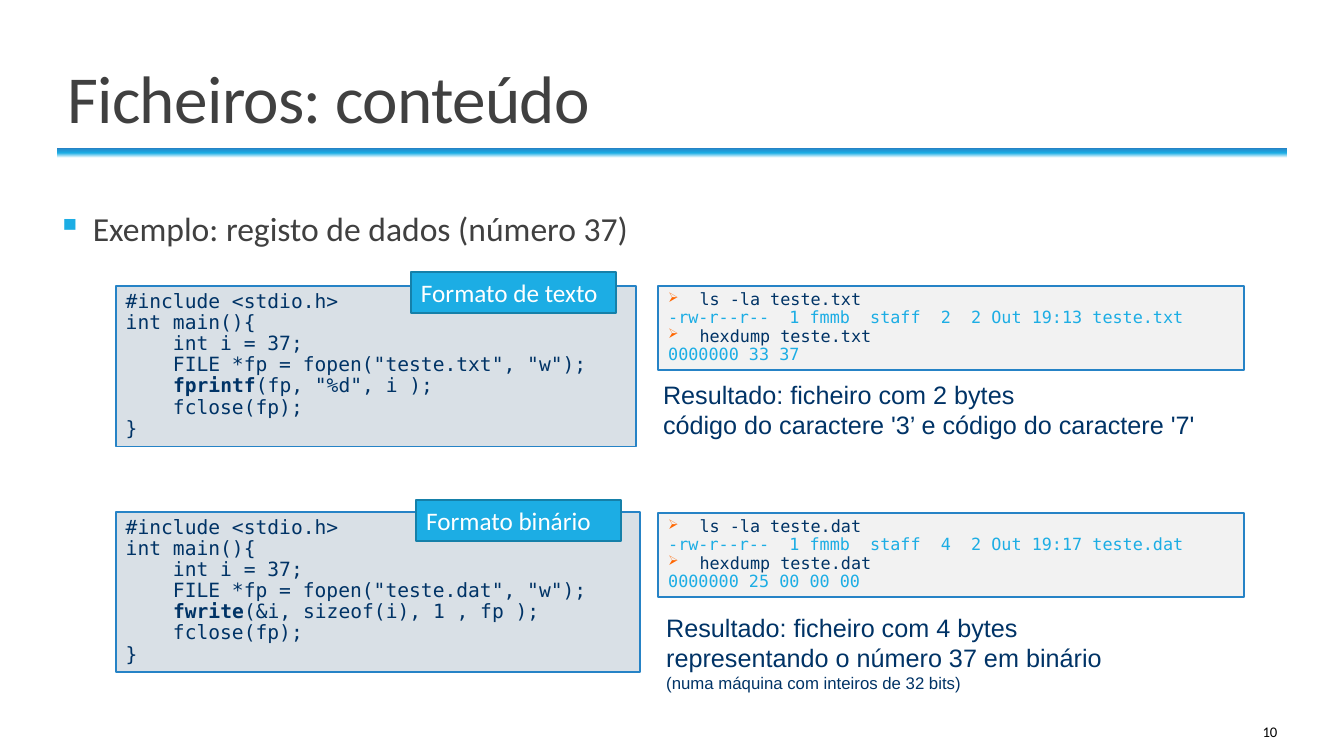
from lxml import etree
from copy import deepcopy
from pptx import Presentation
from pptx.dml.color import RGBColor
from pptx.enum.shapes import MSO_SHAPE
from pptx.enum.text import MSO_ANCHOR, PP_ALIGN
from pptx.oxml.ns import qn
from pptx.util import Cm, Pt

RECT = MSO_SHAPE.RECTANGLE
TOP, MIDDLE, BOTTOM = MSO_ANCHOR.TOP, MSO_ANCHOR.MIDDLE, MSO_ANCHOR.BOTTOM
LEFT, RIGHT = PP_ALIGN.LEFT, PP_ALIGN.RIGHT

COLORS = {
    "white": "FFFFFF", "black": "000000", "gray": "404040", "navy": "003366",
    "sky": "1CADE4", "blue": "2683C6", "teal": "1580A9", "orange": "FF6600",
    "code": "D9E0E6", "shell": "F2F2F2",
}
SANS, MONO, PLAIN = "Calibri", "DejaVu Sans Mono", "Arial"
HANG = 0.79


def rgb(name):
    return RGBColor.from_string(COLORS[name])


def add_bullet(props, char, color, size=100):
    mark = etree.SubElement(props, qn("a:buClr"))
    etree.SubElement(mark, qn("a:srgbClr"), val=COLORS[color])
    etree.SubElement(props, qn("a:buSzPct"), val=str(size * 1000))
    etree.SubElement(props, qn("a:buChar"), char=char)


def write(par, text, size=18, font=SANS, color="navy", align=LEFT, lead=1.0,
          before=0, after=0, hang=0, bullet=None, track=0):
    """Fill a paragraph; parts between double asterisks are bold."""
    par.alignment, par.line_spacing = align, lead
    par.space_before, par.space_after = Pt(before), Pt(after)
    props = par._p.get_or_add_pPr()
    if hang:
        props.set("marL", str(Cm(hang)))
        props.set("indent", str(-Cm(hang)))
    if bullet:
        add_bullet(props, *bullet)
    for i, part in enumerate(text.split("**")):
        run = par.add_run()
        run.text = part
        run.font.size, run.font.name = Pt(size), font
        run.font.bold = i % 2 == 1
        run.font.color.rgb = rgb(color)
        if track:
            run._r.get_or_add_rPr().set("spc", str(track))


class Page:
    def __init__(self, slide):
        self.shapes = slide.shapes

    def fill(self, frame, lines, anchor=TOP, pad=(0.25, 0.13), **style):
        """Write lines, each a string or a (string, format) pair."""
        frame.word_wrap, frame.vertical_anchor = True, anchor
        frame.margin_left = frame.margin_right = Cm(pad[0])
        frame.margin_top = frame.margin_bottom = Cm(pad[1])
        for i, line in enumerate(lines):
            text, own = (line, {}) if isinstance(line, str) else line
            par = frame.add_paragraph() if i else frame.paragraphs[0]
            write(par, text, **{**style, **own})

    def text(self, box, lines, **style):
        shape = self.shapes.add_textbox(*map(Cm, box))
        self.fill(shape.text_frame, lines, **style)

    def panel(self, box, lines, back, edge="blue", **style):
        shape = self.shapes.add_shape(RECT, *map(Cm, box))
        shape.shadow.inherit = False
        shape.fill.solid()
        shape.fill.fore_color.rgb = rgb(back)
        shape.line.color.rgb = rgb(edge)
        shape.line.width = Pt(1.25)
        self.fill(shape.text_frame, lines, **style)

    def bar(self, box, names):
        """Draw a strip that fades upwards through the named colours."""
        shape = self.shapes.add_shape(RECT, *map(Cm, box))
        shape.shadow.inherit = False
        shape.line.fill.background()
        shape.fill.gradient()
        shape.fill.gradient_angle = 90
        stops = shape._element.spPr.find(".//" + qn("a:gsLst"))
        stops.insert(1, deepcopy(stops[0]))
        for i, (stop, name) in enumerate(zip(shape.fill.gradient_stops, names)):
            stop.color.rgb = rgb(name)
            stop.position = i / (len(names) - 1)

    def code(self, box, name, call):
        lines = ["#include <stdio.h>", "int main(){", "    int i = 37;",
                 f'    FILE *fp = fopen("{name}", "w");',
                 f"    {call}", "    fclose(fp);", "}"]
        self.panel(box, lines, "code", size=14, font=MONO, lead=0.9)

    def shell(self, top, name, count, time, dump):
        ask = {"hang": HANG, "bullet": ("➢", "orange", 80)}
        reply = {"color": "sky"}
        lines = [
            (f"ls -la {name}", ask),
            (f"-rw-r--r--  1 fmmb  staff  {count}  2 Out {time} {name}", reply),
            (f"hexdump {name}", ask),
            (f"0000000 {dump}", reply),
        ]
        self.panel((16.59, top, 14.76, 2.11), lines, "shell",
                   size=12, font=MONO, lead=0.9)

    def label(self, left, top, text):
        self.panel((left, top, 5.16, 1.03), [text], "sky", "teal", color="white")

    def result(self, box, lines):
        self.text(box, lines, pad=(0, 0), font=PLAIN, hang=HANG)


def main():
    deck = Presentation()
    deck.slide_width, deck.slide_height = Cm(33.87), Cm(19.05)
    page = Page(deck.slides.add_slide(deck.slide_layouts[6]))

    page.bar((1.45, 3.73, 30.99, 0.25), ("white", "sky", "blue"))
    page.text((27.51, 17.93, 4.93, 1.02), ["10"], anchor=MIDDLE,
              size=10.5, color="black", align=RIGHT)
    page.text((1.45, 0.74, 30.99, 2.84), ["Ficheiros: conteúdo"],
              anchor=BOTTOM, size=48, color="gray", lead=0.85, track=-50)
    page.text((1.45, 5.11, 30.99, 12.24),
              ["Exemplo: registo de dados (número 37)"], pad=(0, 0.13),
              size=24, color="gray", before=12, after=2, hang=0.89,
              bullet=("▪", "sky"))

    page.code((2.92, 7.21, 13.11, 4.04), "teste.txt",
              '**fprintf**(fp, "%d", i );')
    page.label(10.36, 6.86, "Formato de texto")
    page.shell(7.21, "teste.txt", 2, "19:13", "33 37")
    page.result((16.71, 9.55, 15.01, 1.75), [
        "Resultado: ficheiro com 2 bytes",
        "código do caractere '3’ e código do caractere '7'"])

    page.code((2.92, 12.9, 13.21, 4.04), "teste.dat",
              "**fwrite**(&i, sizeof(i), 1 , fp );")
    page.label(10.49, 12.6, "Formato binário")
    page.shell(12.93, "teste.dat", 4, "19:17", "25 00 00 00")
    page.result((16.79, 15.42, 14.88, 2.24), [
        "Resultado: ficheiro com 4 bytes",
        "representando o número 37 em binário",
        ("(numa máquina com inteiros de 32 bits)", {"size": 12})])

    deck.save("out.pptx")


if __name__ == "__main__":
    main()
